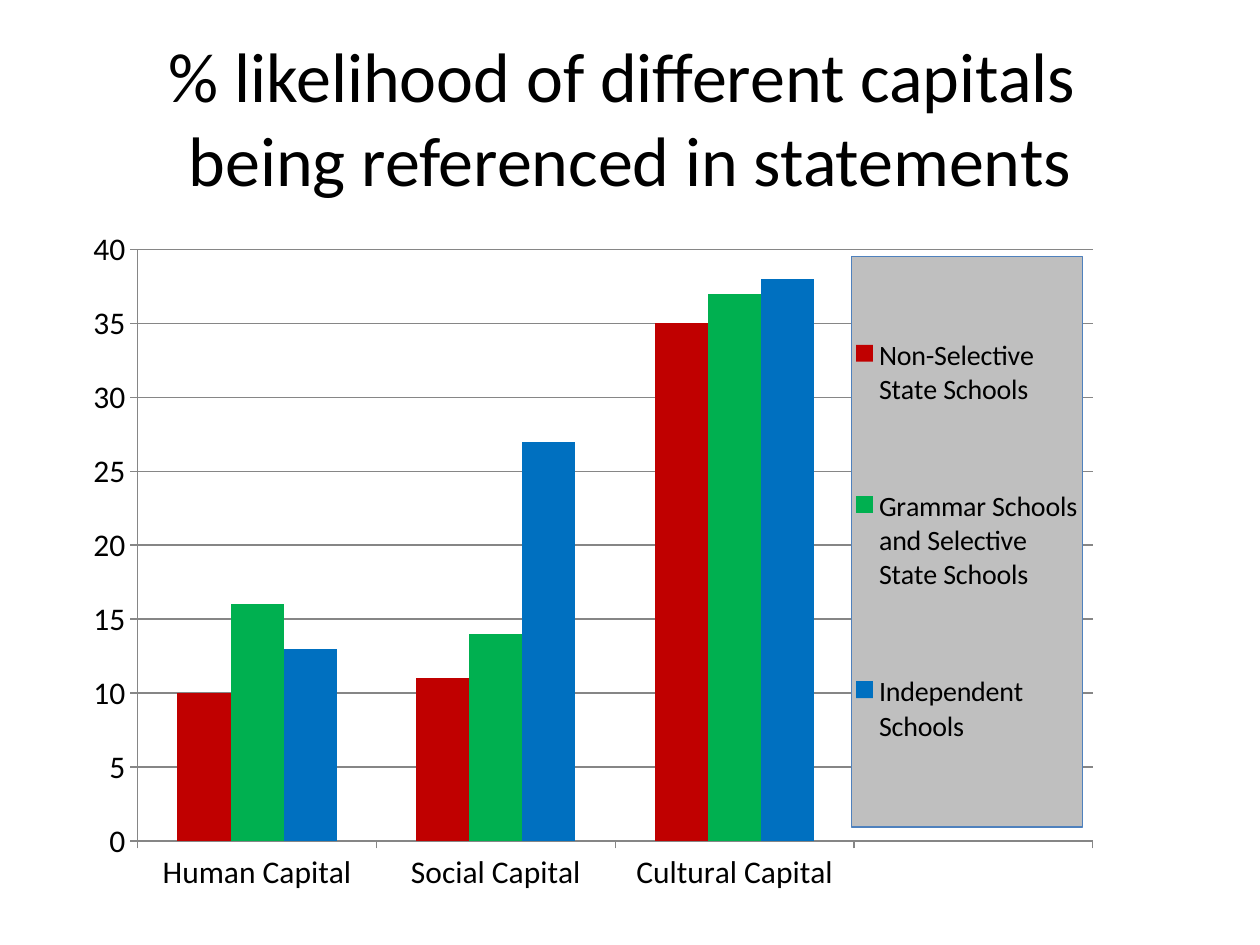
from lxml import etree
from pptx import Presentation, util as u
from pptx.chart import data
from pptx.dml import color
from pptx.enum import chart as charts, text
from pptx.oxml import ns, parse_xml

COLOURS = {"text": "000000", "axis": "868686", "legend": "BFBFBF", "border": "4F81BD"}
FONT = "Calibri"
CATEGORIES = ["Human Capital", "Social Capital", "Cultural Capital", ""]
SCHOOLS = {
    "Non-Selective State Schools": ("C00000", [10, 11, 35, None]),
    "Grammar Schools and Selective State Schools ": ("00B050", [16, 14, 37, None]),
    "Independent Schools": ("0070C0", [13, 27, 38, None]),
}


def place(shape, left, top, width, height):
    """Set a shape's bounds in inches."""
    shape.left, shape.top = u.Inches(left), u.Inches(top)
    shape.width, shape.height = u.Inches(width), u.Inches(height)


def style_font(font, size):
    """Apply the slide's typeface and text colour."""
    font.name, font.size = FONT, u.Pt(size)
    font.color.rgb = color.RGBColor.from_string(COLOURS["text"])


def style_line(line, width=0.75):
    """Draw an axis or grid line in grey."""
    line.color.rgb = color.RGBColor.from_string(COLOURS["axis"])
    line.width = u.Pt(width)


def set_layout(element, index, bounds, inner=False):
    """Give a chart part a manual layout in shares of the chart."""
    for old in element.findall(ns.qn("c:layout")):
        element.remove(old)
    layout = etree.Element(ns.qn("c:layout"))
    manual = etree.SubElement(layout, ns.qn("c:manualLayout"))
    settings = [("layoutTarget", "inner")] if inner else []
    settings += [("xMode", "edge"), ("yMode", "edge"), *zip("xywh", map(str, bounds))]
    for name, value in settings:
        etree.SubElement(manual, ns.qn(f"c:{name}")).set("val", value)
    element.insert(index, layout)


def add_title(page, wording):
    """Fill and place the title placeholder."""
    title = page.shapes.title
    place(title, 0.5, 0.3, 9, 1.25)
    frame = title.text_frame
    frame.text = wording
    frame.vertical_anchor = text.MSO_ANCHOR.MIDDLE
    para = frame.paragraphs[0]
    para.alignment = text.PP_ALIGN.CENTER
    for span in para.runs:
        style_font(span.font, 40)


def style_axes(chart):
    """Format both axes and the gridlines."""
    for axis in (chart.category_axis, chart.value_axis):
        axis.major_tick_mark = charts.XL_TICK_MARK.OUTSIDE
        axis.minor_tick_mark = charts.XL_TICK_MARK.NONE
        style_line(axis.format.line)
        style_font(axis.tick_labels.font, 18)
    values = chart.value_axis
    values.minimum_scale, values.maximum_scale, values.major_unit = 0, 40, 5
    values.has_major_gridlines = True
    style_line(values.major_gridlines.format.line)


def add_legend(chart):
    """Show the legend as a filled panel over the empty fourth column."""
    chart.has_legend = True
    legend = chart.legend
    legend.position = charts.XL_LEGEND_POSITION.TOP
    legend.include_in_layout = False
    style_font(legend.font, 16)
    element = legend._element
    set_layout(element, 1, (0.75, 0.06, 0.22, 0.81))
    panel = parse_xml(
        f'<c:spPr {ns.nsdecls("c", "a")}>'
        f'<a:solidFill><a:srgbClr val="{COLOURS["legend"]}"/></a:solidFill>'
        f'<a:ln w="9525"><a:solidFill><a:srgbClr val="{COLOURS["border"]}"/>'
        "</a:solidFill></a:ln></c:spPr>"
    )
    element.find(ns.qn("c:overlay")).addnext(panel)


def add_capital_chart(page):
    """Add the clustered columns comparing the school types."""
    source = data.CategoryChartData()
    source.categories = CATEGORIES
    for name, (_, values) in SCHOOLS.items():
        source.add_series(name, values)
    bounds = map(u.Inches, (0.51, 1.7, 8.33, 5.59))
    kind = charts.XL_CHART_TYPE.COLUMN_CLUSTERED
    chart = page.shapes.add_chart(kind, *bounds, source).chart
    chart.has_title = False
    style_font(chart.font, 18)
    plot = chart.plots[0]
    plot.gap_width, plot.overlap, plot.vary_by_categories = 150, 0, False
    for series, (shade, _) in zip(plot.series, SCHOOLS.values()):
        series.format.fill.solid()
        series.format.fill.fore_color.rgb = color.RGBColor.from_string(shade)
    style_axes(chart)
    add_legend(chart)
    area = chart._chartSpace.chart.plotArea
    set_layout(area, 0, (0.07, 0.05, 0.91, 0.84), inner=True)


def main():
    """Build and save the slide."""
    deck = Presentation()
    deck.slide_width, deck.slide_height = u.Inches(10), u.Inches(7.5)
    page = deck.slides.add_slide(deck.slide_layouts.get_by_name("Title Only"))
    add_title(page, "% likelihood of different capitals \vbeing referenced in statements")
    add_capital_chart(page)
    deck.save("out.pptx")


if __name__ == "__main__":
    main()
